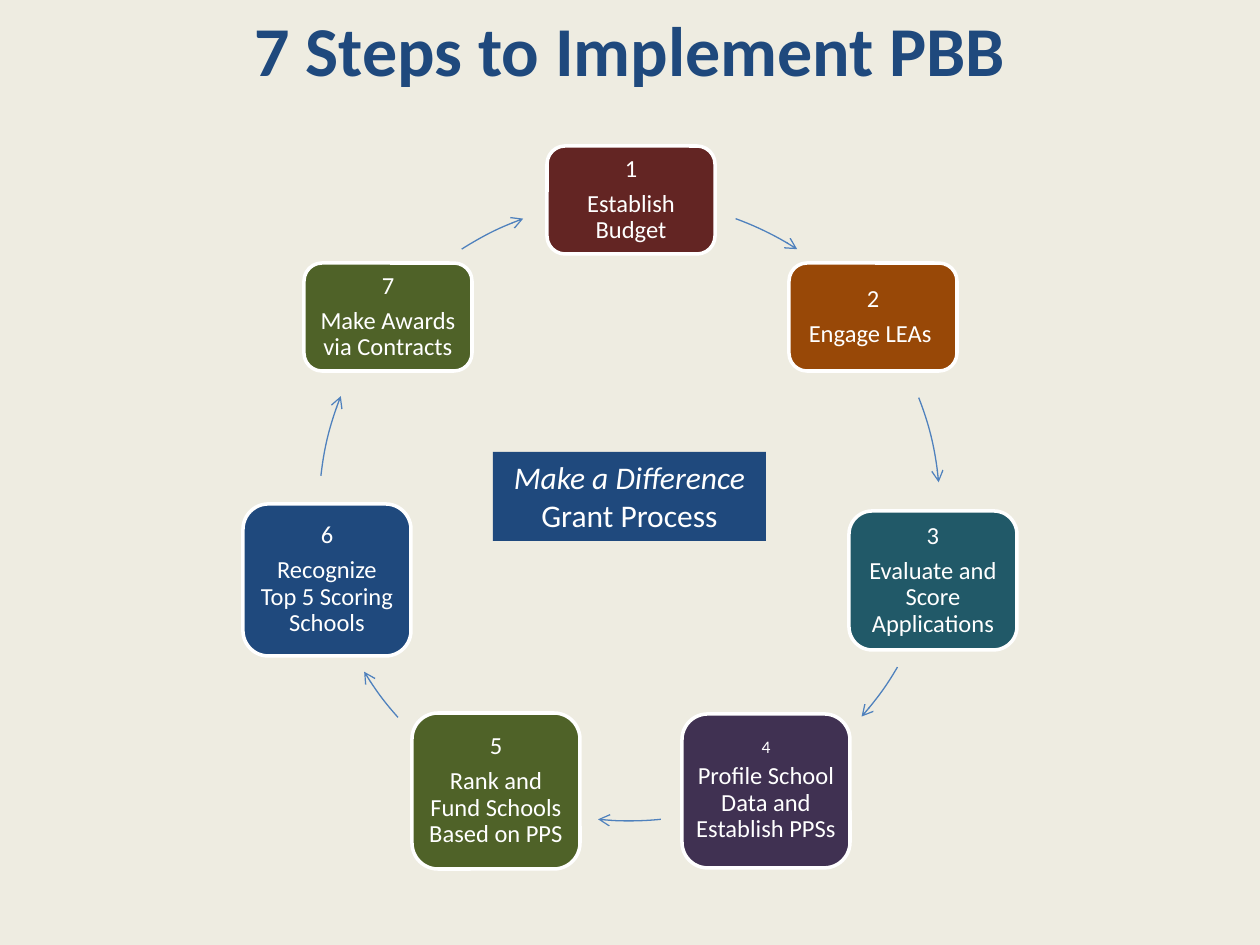
"""Build the slide showing the seven-step cycle of the grant process."""
from lxml import etree
from pptx import Presentation
from pptx.dml.color import RGBColor
from pptx.enum.shapes import MSO_SHAPE
from pptx.enum.text import MSO_ANCHOR, PP_ALIGN
from pptx.oxml.ns import qn
from pptx.util import Inches, Pt

PX = 7257
ROUNDED, RECT, ARC = MSO_SHAPE.ROUNDED_RECTANGLE, MSO_SHAPE.RECTANGLE, MSO_SHAPE.ARC
CENTER, MIDDLE, TOP = PP_ALIGN.CENTER, MSO_ANCHOR.MIDDLE, MSO_ANCHOR.TOP
NAVY, WHITE, ARROW_BLUE, CREAM = "1F497D", "FFFFFF", "4F81BD", "EEECE1"
STEP_WIDTH = 168
DEGREE = 0.6


def paint(target, fill=None, line=None, width=1):
    """Set the fill and outline of a shape from hex colours."""
    target.shadow.inherit = False
    for part, color in ((target.fill, fill), (target.line.fill, line)):
        if color:
            part.solid()
            part.fore_color.rgb = RGBColor.from_string(color)
        else:
            part.background()
    if line:
        target.line.width = Pt(width)


def write(paragraph, text, size=14, color=WHITE, bold=False, italic=False):
    """Add a formatted run to a centred paragraph."""
    paragraph.alignment = CENTER
    run = paragraph.add_run()
    run.text = text
    run.font.name = "Calibri"
    run.font.size = Pt(size)
    run.font.bold = bold
    run.font.italic = italic
    run.font.color.rgb = RGBColor.from_string(color)


prs = Presentation()
prs.slide_width, prs.slide_height = Inches(10), Inches(7.5)
slide = prs.slides.add_slide(prs.slide_layouts[6])
slide.background.fill.solid()
slide.background.fill.fore_color.rgb = RGBColor.from_string(CREAM)

steps = [
    ("Establish Budget", "632523", 547, 146, 108, 14, 8),
    ("Engage LEAs ", "984807", 789, 263, 108, 14, 8),
    ("Evaluate and Score Applications", "215968", 849, 511, 139, 14, 8),
    ("Profile School Data and Establish PPSs", "403152", 682, 714, 154, 10, 5),
    ("Rank and Fund Schools Based on PPS", "4F6228", 412, 713, 156, 14, 8),
    ("Recognize Top 5 Scoring Schools", NAVY, 243, 504, 152, 14, 8),
    ("Make Awards via Contracts", "4F6228", 304, 263, 108, 14, 8),
]
for number, (label, color, left, top, height, number_size, inset) in enumerate(steps, 1):
    step = slide.shapes.add_shape(ROUNDED, left * PX, top * PX, STEP_WIDTH * PX, height * PX)
    paint(step, color, WHITE, 2)
    frame = step.text_frame
    frame.word_wrap = True
    frame.vertical_anchor = MIDDLE
    frame.margin_left = frame.margin_right = inset * PX
    frame.margin_top = frame.margin_bottom = inset * PX
    for paragraph, text, size in ((frame.paragraphs[0], str(number), number_size),
                                  (frame.add_paragraph(), label, 14)):
        write(paragraph, text, size)
        paragraph.line_spacing = 0.9
        paragraph.space_after = Pt(0.35 * size)

arrow_angles = [(290, 302.7), (338.7, 354.8), (30.3, 41.6), (84.2, 95.8),
                (138.2, 148.7), (186.4, 201.6), (237.3, 250)]
for start, end in arrow_angles:
    arrow = slide.shapes.add_shape(ARC, 319 * PX, 200 * PX, 621 * PX, 621 * PX)
    arrow.adjustments[0], arrow.adjustments[1] = start * DEGREE, end * DEGREE
    paint(arrow, line=ARROW_BLUE, width=0.75)
    etree.SubElement(arrow.line._get_or_add_ln(), qn("a:tailEnd"), type="arrow")

process = slide.shapes.add_shape(RECT, 493 * PX, 452 * PX, 273 * PX, 89 * PX)
paint(process, NAVY)
process.text_frame.word_wrap = True
process.text_frame.vertical_anchor = TOP
write(process.text_frame.paragraphs[0], "Make a Difference", size=18, italic=True)
write(process.text_frame.paragraphs[0], " Grant Process", size=18)

title = slide.shapes.add_textbox(0, 0, 1260 * PX, 97 * PX)
title.text_frame.word_wrap = True
write(title.text_frame.paragraphs[0], "7 Steps to Implement PBB", size=40, color=NAVY, bold=True)

prs.save("out.pptx")
